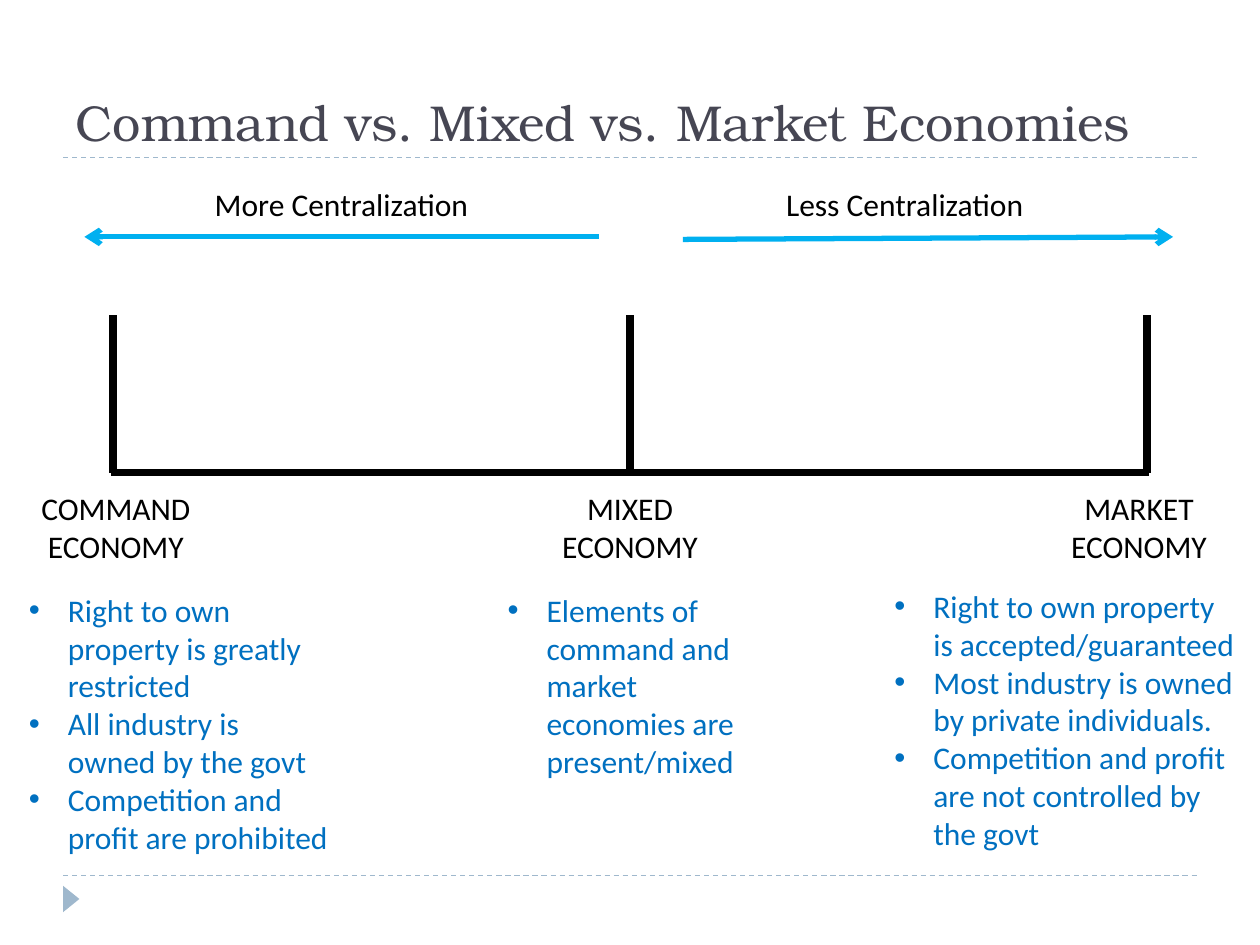
from dataclasses import dataclass

from pptx import Presentation
from pptx.dml.color import RGBColor as Color
from pptx.enum.dml import MSO_LINE as Dash
from pptx.enum.shapes import MSO_CONNECTOR as Connector, MSO_SHAPE as Shape
from pptx.enum.text import MSO_ANCHOR as Anchor, MSO_AUTO_SIZE as AutoSize, PP_ALIGN as Align
from pptx.oxml.ns import qn
from pptx.util import Inches, Pt
from lxml.etree import SubElement


@dataclass(frozen=True)
class Theme:
    title_font: str = "TeX Gyre Bonum"
    body_font: str = "Calibri"
    title_size: float = 28.8
    body_size: float = 18
    title: str = "464653"
    text: str = "000000"
    points: str = "0070C0"
    arrow: str = "00B0F0"
    accent: str = "9FB8CD"
    rule_width: float = 0.75
    scale_width: float = 4.5
    arrow_width: float = 3


THEME = Theme()
TITLE = "Command vs. Mixed vs. Market Economies"
RULE_TOPS = (6.95, 1.25)
SCALE_TOP, SCALE_BASE = 2.5, 3.75
SCALE_LEFT, SCALE_RIGHT = 0.9, 9.1
SCALE_OVERHANG = 0.02

DIRECTIONS = [
    ("More Centralization", 1.5, (4.75, 1.88), (0.67, 1.88)),
    ("Less Centralization", 5.97, (5.42, 1.9), (9.31, 1.88)),
]
ECONOMIES = [
    {
        "label": ["COMMAND", "ECONOMY"],
        "label_box": (-0.12, 3.83, 2.08, 0.71),
        "points": [
            "Right to own property is greatly restricted",
            "All industry is owned by the govt",
            "Competition and profit are prohibited",
        ],
        "points_box": (0.13, 4.64, 2.58, 2.22),
    },
    {
        "label": ["MIXED", "ECONOMY"],
        "label_box": (3.79, 3.83, 2.42, 0.71),
        "points": ["Elements of command and market economies are present/mixed"],
        "points_box": (3.93, 4.64, 2.13, 1.62),
    },
    {
        "label": ["MARKET", "ECONOMY"],
        "label_box": (8.08, 3.83, 1.92, 0.71),
        "points": [
            "Right to own property is accepted/guaranteed",
            "Most industry is owned by private individuals.",
            "Competition and profit are not controlled by the govt",
        ],
        "points_box": (7, 4.61, 2.94, 2.22),
    },
]


def style_font(para, name, size, color):
    para.font.name = name
    para.font.size = Pt(size)
    para.font.color.rgb = Color.from_string(color)


def add_line(slide, start, end, color, width, dashed=False, arrow=False):
    line = slide.shapes.add_connector(
        Connector.STRAIGHT, *(Inches(value) for value in (*start, *end)))
    line.line.color.rgb = Color.from_string(color)
    line.line.width = Pt(width)
    if dashed:
        line.line.dash_style = Dash.DASH
    if arrow:
        SubElement(line.line._get_or_add_ln(), qn("a:tailEnd"), type="arrow")
    SubElement(line._element.spPr, qn("a:effectLst"))


def add_bullet(para):
    properties = para._p.get_or_add_pPr()
    properties.set("marL", str(Inches(0.31)))
    properties.set("indent", str(-Inches(0.31)))
    SubElement(properties, qn("a:buFont"), typeface="Arial")
    SubElement(properties, qn("a:buChar"), char="•")


def add_text(slide, place, lines, color, bulleted=False):
    box = slide.shapes.add_textbox(*(Inches(value) for value in place))
    frame = box.text_frame
    frame.word_wrap = True
    frame.auto_size = AutoSize.SHAPE_TO_FIT_TEXT
    frame.text = "\n".join(lines)
    for para in frame.paragraphs:
        style_font(para, THEME.body_font, THEME.body_size, color)
        if bulleted:
            add_bullet(para)
        else:
            para.alignment = Align.CENTER


def add_title(slide):
    title = slide.shapes.title
    title.left, title.top = Inches(0.5), Inches(0.17)
    title.width, title.height = Inches(9), Inches(1.08)
    frame = title.text_frame
    frame.text = TITLE
    frame.word_wrap = True
    frame.auto_size = AutoSize.NONE
    frame.vertical_anchor = Anchor.BOTTOM
    para = frame.paragraphs[0]
    para.alignment = Align.LEFT
    style_font(para, THEME.title_font, THEME.title_size, THEME.title)


def add_frame(slide):
    for top in RULE_TOPS:
        add_line(slide, (0.5, top), (9.5, top), THEME.accent, THEME.rule_width, dashed=True)
    marker = slide.shapes.add_shape(
        Shape.ISOSCELES_TRIANGLE, Inches(0.46), Inches(7.07), Inches(0.21), Inches(0.13))
    marker.rotation = 90
    marker.shadow.inherit = False
    marker.fill.solid()
    marker.fill.fore_color.rgb = Color.from_string(THEME.accent)
    marker.line.fill.background()


def add_scale(slide):
    add_line(slide, (SCALE_LEFT - SCALE_OVERHANG, SCALE_BASE),
             (SCALE_RIGHT + SCALE_OVERHANG, SCALE_BASE), THEME.text, THEME.scale_width)
    step = (SCALE_RIGHT - SCALE_LEFT) / (len(ECONOMIES) - 1)
    for index in range(len(ECONOMIES)):
        left = SCALE_LEFT + index * step
        add_line(slide, (left, SCALE_BASE), (left, SCALE_TOP), THEME.text, THEME.scale_width)


def main():
    deck = Presentation()
    deck.slide_width, deck.slide_height = Inches(10), Inches(7.5)
    page = deck.slides.add_slide(deck.slide_layouts[5])
    add_frame(page)
    add_title(page)
    add_scale(page)
    for label, left, start, end in DIRECTIONS:
        add_line(page, start, end, THEME.arrow, THEME.arrow_width, arrow=True)
        add_text(page, (left, 1.42, 2.42, 0.4), [label], THEME.text)
    for economy in ECONOMIES:
        add_text(page, economy["label_box"], economy["label"], THEME.text)
        add_text(page, economy["points_box"], economy["points"], THEME.points, bulleted=True)
    deck.save("out.pptx")


if __name__ == "__main__":
    main()
